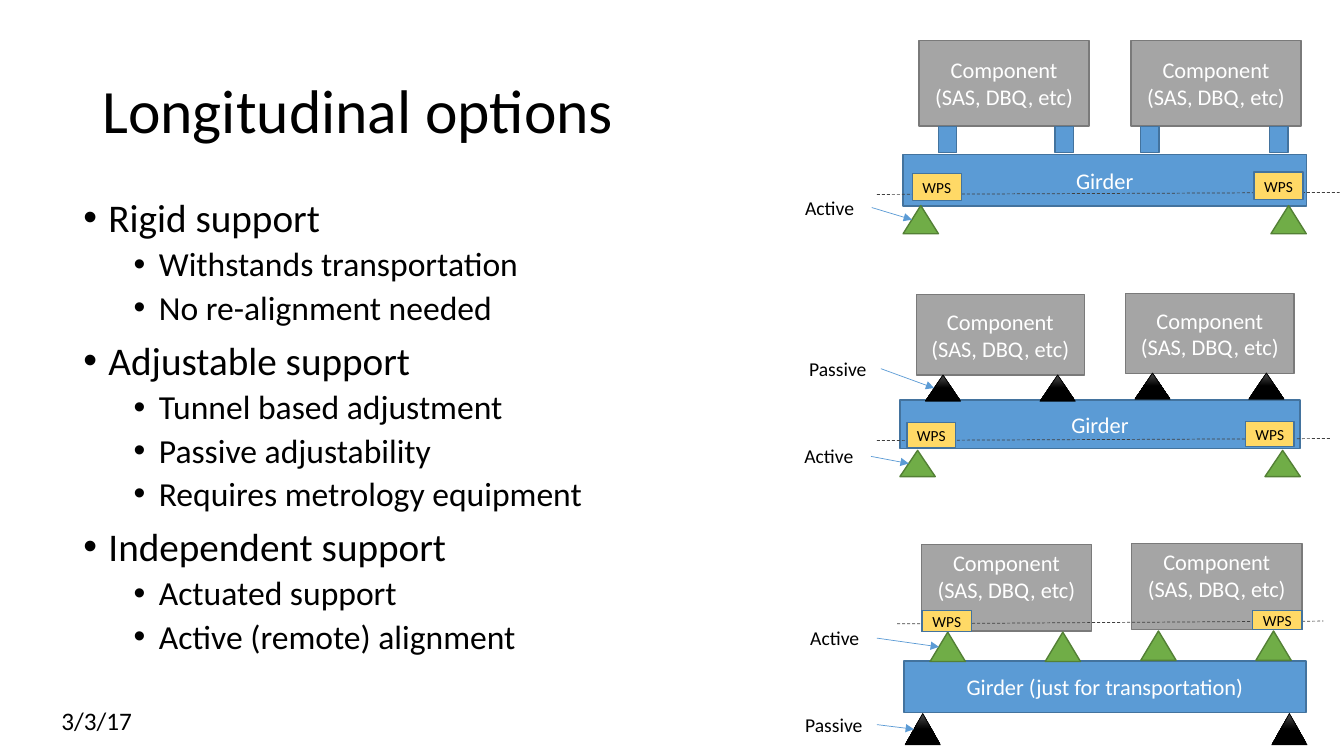
from lxml import etree
from pptx import Presentation
from pptx.dml.color import RGBColor
from pptx.enum.dml import MSO_LINE
from pptx.enum.shapes import MSO_CONNECTOR, MSO_SHAPE
from pptx.enum.text import MSO_ANCHOR, MSO_AUTO_SIZE, PP_ALIGN
from pptx.oxml.ns import qn
from pptx.util import Cm, Pt

# Content: all lengths in centimetres
TITLE = "Longitudinal options"
DATE = "3/3/17"
OPTIONS = [
    ("Rigid support", ["Withstands transportation", "No re-alignment needed"]),
    ("Adjustable support", ["Tunnel based adjustment", "Passive adjustability",
                            "Requires metrology equipment"]),
    ("Independent support", ["Actuated support", "Active (remote) alignment"]),
]
COMPONENT = "Component\n(SAS, DBQ, etc)"

# Boxes are left, top, width, height; supports are kind, top, height, lefts
SCHEMES = [
    {
        "girder": ("Girder", (22.76, 3.89, 10.16, 1.3)),
        "components": [(23.16, 1.02, 4.29, 2.16), (28.5, 1.02, 4.29, 2.16)],
        "anchor": MSO_ANCHOR.MIDDLE,
        "supports": [("post", 3.19, 0.66, [23.65, 26.59, 28.75, 32.0]),
                     ("active", 5.18, 0.71, [22.76, 32.03])],
        "wire": (22.1, 4.9, 33.76, 4.85),
        "sensors": [(31.6, 4.34, 1.24, 0.69), (22.99, 4.37, 1.24, 0.69)],
    },
    {
        "girder": ("Girder", (22.68, 10.08, 10.08, 1.22)),
        "components": [(23.09, 7.42, 4.24, 2.03), (28.37, 7.39, 4.24, 2.03)],
        "anchor": MSO_ANCHOR.MIDDLE,
        "supports": [("passive", 9.45, 0.66, [23.32, 26.21]),
                     ("passive", 9.4, 0.66, [28.6, 31.47]),
                     ("active", 11.35, 0.66, [22.68, 31.88])],
        "wire": (22.1, 11.1, 33.55, 11.05),
        "sensors": [(31.39, 10.62, 1.22, 0.64), (22.86, 10.64, 1.22, 0.64)],
    },
    {
        "girder": ("Girder (just for transportation)", (22.78, 16.66, 10.13, 1.3)),
        "components": [(23.22, 13.72, 4.29, 2.18), (28.52, 13.69, 4.29, 2.18)],
        "anchor": MSO_ANCHOR.TOP,
        "supports": [("active", 15.93, 0.74, [23.44, 26.34]),
                     ("active", 15.9, 0.74, [28.75, 31.65]),
                     ("passive", 17.98, 0.79, [22.81, 32.05])],
        "wire": (22.61, 15.72, 33.35, 15.65),
        "sensors": [(31.57, 15.39, 1.24, 0.48), (23.24, 15.39, 1.24, 0.53)],
    },
]

# Label text, box, then the scheme and support row whose first support it names
LABELS = [
    ("Active", (20.04, 4.8, 1.93, 0.86), 0, 1),
    ("Active", (20.02, 11.07, 1.93, 0.86), 1, 2),
    ("Active", (20.17, 15.65, 1.93, 0.86), 2, 0),
    ("Passive", (20.14, 8.86, 2.06, 0.86), 1, 0),
    ("Passive", (20.04, 17.83, 2.06, 0.86), 2, 2),
]

FONT = "Calibri"
BLACK, WHITE = "000000", "FFFFFF"
BLUE, BLUE_EDGE = "5B9BD5", "43739E"
# Support kind: shape, width, fill, edge, edge width
SUPPORT_STYLES = {
    "post": (MSO_SHAPE.RECTANGLE, 0.46, BLUE, BLUE_EDGE, 1),
    "active": (MSO_SHAPE.ISOSCELES_TRIANGLE, 0.89, "70AD47", "538035", 1),
    "passive": (MSO_SHAPE.ISOSCELES_TRIANGLE, 0.89, ("4B4B4B", BLACK), BLACK, 0.5),
}


def color(hex_string):
    return RGBColor.from_string(hex_string)


def style_font(paragraph, size, hex_string=BLACK):
    paragraph.font.name = FONT
    paragraph.font.size = Pt(size)
    paragraph.font.color.rgb = color(hex_string)


def add_box(shapes, kind, box, fill, edge, edge_width=1):
    shape = shapes.add_shape(kind, *map(Cm, box))
    shape.shadow.inherit = False
    if isinstance(fill, tuple):
        shape.fill.gradient()
        shape.fill.gradient_angle = 270
        for stop, hex_string, position in zip(shape.fill.gradient_stops, fill, (0, 0.5)):
            stop.color.rgb = color(hex_string)
            stop.position = position
    else:
        shape.fill.solid()
        shape.fill.fore_color.rgb = color(fill)
    shape.line.color.rgb = color(edge)
    shape.line.width = Pt(edge_width)
    return shape


def write_centred(shape, text, size, hex_string, anchor=MSO_ANCHOR.MIDDLE):
    frame = shape.text_frame
    frame.text = text
    frame.word_wrap = True
    frame.vertical_anchor = anchor
    frame.margin_left = frame.margin_right = 0
    for paragraph in frame.paragraphs:
        paragraph.alignment = PP_ALIGN.CENTER
        style_font(paragraph, size, hex_string)


def add_line(shapes, ends, hex_string):
    line = shapes.add_connector(MSO_CONNECTOR.STRAIGHT, *map(Cm, ends))
    line.line.color.rgb = color(hex_string)
    line.line.width = Pt(0.5)
    etree.SubElement(line._element.spPr, qn("a:effectLst"))
    return line


def add_text(box, text="", size=18, anchor=MSO_ANCHOR.TOP):
    shape = slide.shapes.add_textbox(*map(Cm, box))
    frame = shape.text_frame
    frame.word_wrap = True
    frame.vertical_anchor = anchor
    frame.text = text
    style_font(frame.paragraphs[0], size)
    return shape


def add_bullet(frame, text, level, first):
    paragraph = frame.paragraphs[0] if first else frame.add_paragraph()
    paragraph.text = text
    paragraph.level = level
    paragraph.line_spacing = 0.9
    paragraph.space_before = Pt(0 if first else (10, 5)[level])
    properties = paragraph._p.get_or_add_pPr()
    properties.set("marL", str(Cm((0.635, 1.905)[level])))
    properties.set("indent", str(Cm(-0.635)))
    etree.SubElement(properties, qn("a:buFont")).set("typeface", "Arial")
    etree.SubElement(properties, qn("a:buChar")).set("char", "•")
    style_font(paragraph, (28, 24)[level])


presentation = Presentation()
presentation.slide_width, presentation.slide_height = Cm(33.87), Cm(19.05)
slide = presentation.slides.add_slide(presentation.slide_layouts[6])

# Title
title = add_text((2.33, 1.01, 29.21, 3.68), TITLE, 44, MSO_ANCHOR.MIDDLE)
title.text_frame.paragraphs[0].line_spacing = 0.9

# Support schemes
for scheme in SCHEMES:
    shapes = slide.shapes.add_group_shape().shapes
    girder_text, girder_box = scheme["girder"]
    girder = add_box(shapes, MSO_SHAPE.RECTANGLE, girder_box, BLUE, BLUE_EDGE)
    write_centred(girder, girder_text, 16, WHITE)
    for box in scheme["components"]:
        component = add_box(shapes, MSO_SHAPE.RECTANGLE, box, "A5A5A5", "7A7A7A")
        write_centred(component, COMPONENT, 16, WHITE, scheme["anchor"])
    for kind, top, height, lefts in scheme["supports"]:
        preset, width, *look = SUPPORT_STYLES[kind]
        for left in lefts:
            add_box(shapes, preset, (left, top, width, height), *look)
    wire = add_line(shapes, scheme["wire"], "404040")
    wire.line.dash_style = MSO_LINE.DASH
    for box in scheme["sensors"]:
        sensor = add_box(shapes, MSO_SHAPE.RECTANGLE, box, "FFD966", BLUE_EDGE)
        write_centred(sensor, "WPS", 11, BLACK)

# Labels, each with an arrow to the middle of a triangle's left edge
for text, box, scheme_index, row in LABELS:
    label = add_text(box, text, 14)
    label.text_frame.auto_size = MSO_AUTO_SIZE.SHAPE_TO_FIT_TEXT
    kind, top, height, lefts = SCHEMES[scheme_index]["supports"][row]
    target = (lefts[0] + SUPPORT_STYLES[kind][1] / 4, top + height / 2)
    left, label_top, width, label_height = box
    start = (left + width, label_top + label_height / 2)
    arrow = add_line(slide.shapes, start + target, BLUE)
    arrow.begin_connect(label, 3)
    etree.SubElement(arrow.line._get_or_add_ln(), qn("a:tailEnd")).set("type", "triangle")

# Bulleted options
body = add_text((1.85, 4.88, 16.64, 12.09)).text_frame
for index, (heading, details) in enumerate(OPTIONS):
    add_bullet(body, heading, 0, index == 0)
    for detail in details:
        add_bullet(body, detail, 1, False)

# Date
date = add_text((1.3, 17.65, 2.77, 1.02), DATE)
date.text_frame.auto_size = MSO_AUTO_SIZE.SHAPE_TO_FIT_TEXT

presentation.save("out.pptx")
